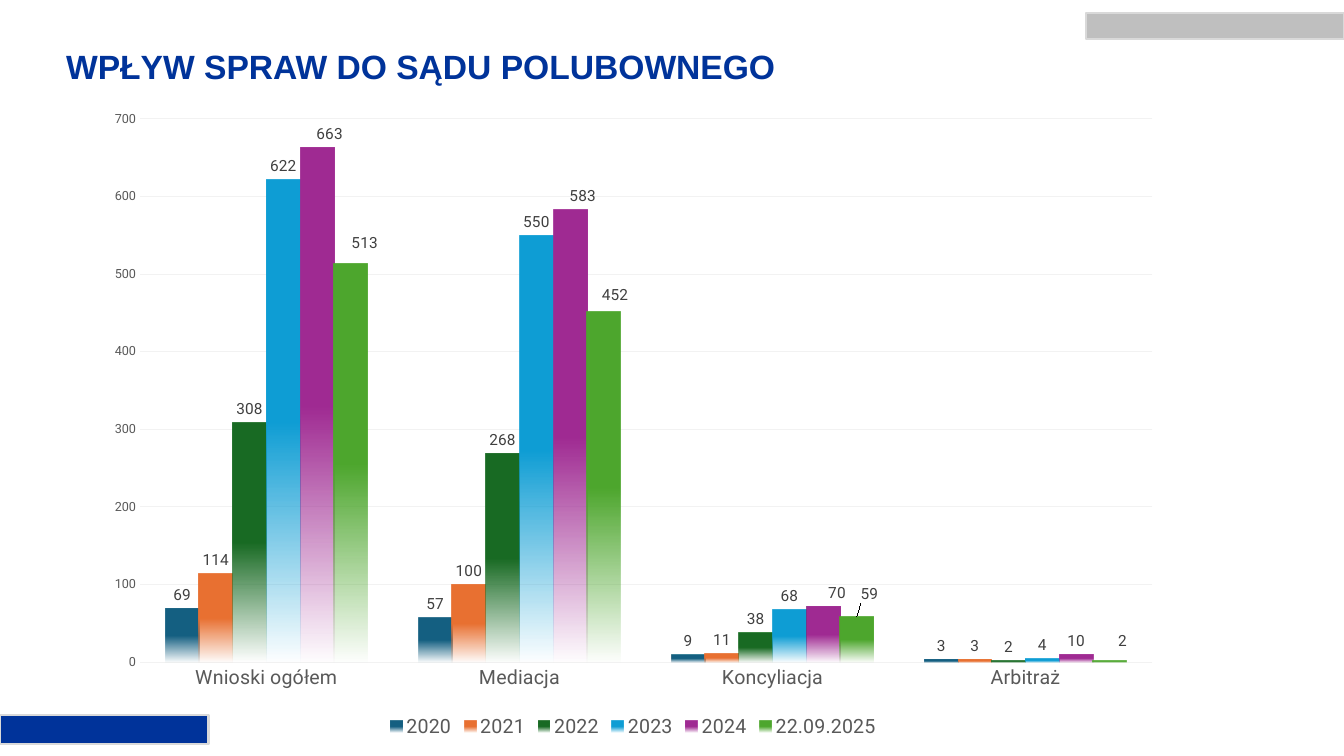
from dataclasses import dataclass

from lxml.etree import SubElement
from pptx import Presentation
from pptx.chart.data import CategoryChartData
from pptx.dml.color import RGBColor
from pptx.enum.chart import (XL_CHART_TYPE, XL_LABEL_POSITION,
                             XL_LEGEND_POSITION, XL_TICK_MARK)
from pptx.enum.shapes import MSO_SHAPE
from pptx.enum.text import MSO_ANCHOR, PP_ALIGN
from pptx.oxml import parse_xml
from pptx.oxml.ns import nsdecls, qn
from pptx.util import Pt


@dataclass(frozen=True)
class Theme:
    title_font: str = "Arial"
    chart_font: str = "Roboto"
    title_size: int = 24
    category_size: int = 14
    label_size: int = 11
    value_size: int = 9
    navy: str = "00339A"
    silver: str = "BFBFBF"
    border: str = "D9D9D9"
    axis_text: str = "595959"
    label_text: str = "404040"
    grid: str = "F2F2F2"
    bars: tuple = ("156082", "E97132", "196B24", "0F9ED5", "A02B93", "4EA72E")


THEME = Theme()
CATEGORIES = ("Wnioski ogółem", "Mediacja", "Koncyliacja", "Arbitraż")
CASES = {
    "2020": (69, 57, 9, 3),
    "2021": (114, 100, 11, 3),
    "2022": (308, 268, 38, 2),
    "2023": (622, 550, 68, 4),
    "2024": (663, 583, 71, 10),
    "22.09.2025": (513, 452, 59, 2),
}
# Label shifts in points, per series and category
LABEL_SHIFTS = {
    "2024": ((9, 0), (9, 0), (10, 0)),
    "22.09.2025": ((10, -5), (8, -2), (9, -6), (9, -4)),
}
LABEL_TEXTS = {("2024", 2): "70"}
CHART_BOX = (66, 70.5, 772.5, 460)
PLOT_BOX = (100, 85, 723, 388)


def style_font(font, size, color, name=THEME.chart_font, bold=False):
    font.size = Pt(size)
    font.name = name
    font.bold = bold
    font.color.rgb = RGBColor.from_string(color)


def write_text(tf, text, align=None, **style):
    p = tf.paragraphs[0]
    p.alignment = align
    r = p.add_run()
    r.text = text
    style_font(r.font, **style)
    return p


def add_title(s, text):
    sp = s.shapes.title
    sp.left, sp.top, sp.width, sp.height = map(Pt, (40, 28, 828, 42.5))
    tf = sp.text_frame
    tf.vertical_anchor = MSO_ANCHOR.MIDDLE
    p = write_text(tf, text, align=PP_ALIGN.LEFT, size=THEME.title_size,
                   color=THEME.navy, name=THEME.title_font, bold=True)
    p.line_spacing = 0.9


def add_bar(s, box, color):
    sp = s.shapes.add_shape(MSO_SHAPE.RECTANGLE, *map(Pt, box))
    sp.shadow.inherit = False
    sp.fill.solid()
    sp.fill.fore_color.rgb = RGBColor.from_string(color)
    sp.line.color.rgb = RGBColor.from_string(THEME.border)
    sp.line.width = Pt(1.5)


def manual_layout(inner=False, **values):
    """Build a c:layout element from fractions of the chart's size."""
    tags = {"layoutTarget": "inner", "xMode": "edge", "yMode": "edge"} if inner else {}
    tags.update(values)
    items = "".join(f'<c:{tag} val="{val}"/>' for tag, val in tags.items())
    return parse_xml(f'<c:layout {nsdecls("c")}><c:manualLayout>{items}'
                     "</c:manualLayout></c:layout>")


def place_plot(chart):
    left, top, width, height = CHART_BOX
    x, y, w, h = PLOT_BOX
    area = chart.element.find(".//" + qn("c:plotArea"))
    for old in area.findall(qn("c:layout")):
        area.remove(old)
    area.insert(0, manual_layout(
        inner=True, x=round((x - left) / width, 4), y=round((y - top) / height, 4),
        w=round(w / width, 4), h=round(h / height, 4)))


def fade_fill(ser, color):
    """Fill the columns with a colour that fades out towards the base."""
    fill = ser.format.fill
    fill.gradient()
    fill.gradient_angle = 270
    for stop, position in zip(fill.gradient_stops, (0.5, 1)):
        stop.position = position
        stop.color.rgb = RGBColor.from_string(color)
    end = ser.element.findall(".//" + qn("a:gs"))[-1] if hasattr(ser, "element") \
        else ser._element.findall(".//" + qn("a:gs"))[-1]
    SubElement(end[0], qn("a:alpha")).set("val", "0")


def label_series(ser):
    style = dict(size=THEME.label_size, color=THEME.label_text)
    labels = ser.data_labels
    labels.show_value = True
    labels.position = XL_LABEL_POSITION.OUTSIDE_END
    style_font(labels.font, **style)
    for i, (dx, dy) in enumerate(LABEL_SHIFTS.get(ser.name, ())):
        label = ser.points[i].data_label
        text = LABEL_TEXTS.get((ser.name, i))
        if text:
            write_text(label.text_frame, text, **style)
        else:
            style_font(label.font, **style)
        label.position = XL_LABEL_POSITION.OUTSIDE_END
        for idx in ser._element.findall(f".//{qn('c:dLbl')}/{qn('c:idx')}"):
            if idx.get("val") == str(i):
                idx.addnext(manual_layout(x=round(dx / CHART_BOX[2], 4),
                                          y=round(dy / CHART_BOX[3], 4)))


def style_axis(axis, size):
    axis.major_tick_mark = axis.minor_tick_mark = XL_TICK_MARK.NONE
    axis.format.line.fill.background()
    style_font(axis.tick_labels.font, size, THEME.axis_text)


def add_cases_chart(s):
    data = CategoryChartData()
    data.categories = CATEGORIES
    for year, values in CASES.items():
        data.add_series(year, values)
    chart = s.shapes.add_chart(XL_CHART_TYPE.COLUMN_CLUSTERED,
                               *map(Pt, CHART_BOX), data).chart
    style_font(chart.font, 10, "000000")
    chart.has_title = False
    chart.has_legend = True
    chart.legend.position = XL_LEGEND_POSITION.BOTTOM
    chart.legend.include_in_layout = False
    style_font(chart.legend.font, THEME.category_size, THEME.axis_text)

    style_axis(chart.category_axis, THEME.category_size)
    axis = chart.value_axis
    style_axis(axis, THEME.value_size)
    axis.minimum_scale, axis.maximum_scale, axis.major_unit = 0, 700, 100
    grid = axis.major_gridlines.format.line
    grid.color.rgb = RGBColor.from_string(THEME.grid)
    grid.width = Pt(0.75)

    plot = chart.plots[0]
    plot.vary_by_categories = False
    plot.gap_width, plot.overlap = 150, 0
    for ser, color in zip(plot.series, THEME.bars):
        fade_fill(ser, color)
        label_series(ser)
    place_plot(chart)


def main():
    prs = Presentation()
    prs.slide_width, prs.slide_height = Pt(960), Pt(540)
    s = prs.slides.add_slide(prs.slide_layouts[5])
    add_title(s, "WPŁYW SPRAW DO SĄDU POLUBOWNEGO")
    add_bar(s, (775.5, 9.5, 184.5, 18.5), THEME.silver)
    add_bar(s, (0, 510.5, 149, 21), THEME.navy)
    add_cases_chart(s)
    prs.save("out.pptx")


if __name__ == "__main__":
    main()
